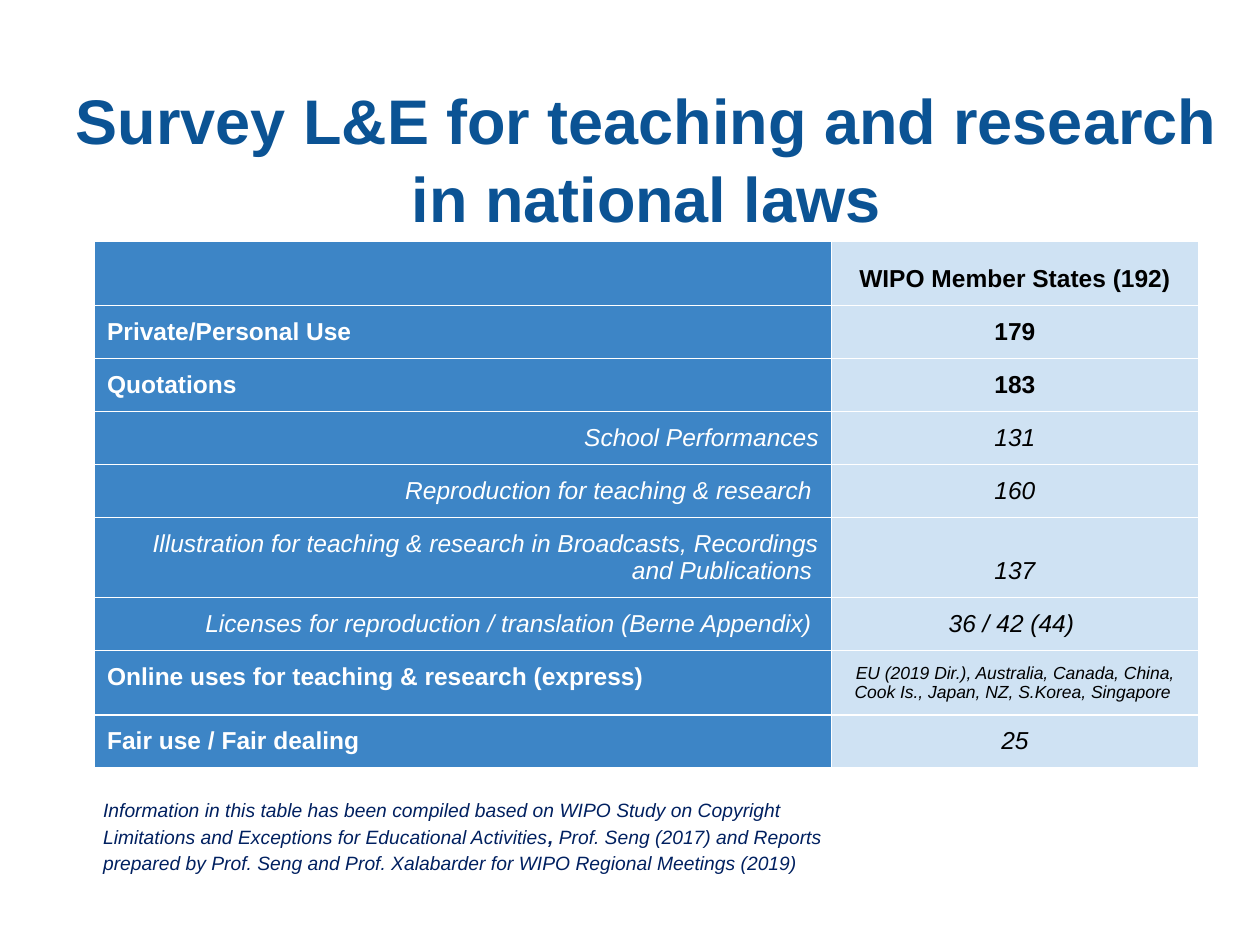
from lxml.etree import SubElement
from pptx import Presentation
from pptx.dml.color import RGBColor
from pptx.enum.text import MSO_ANCHOR as Anchor, MSO_AUTO_SIZE as AutoSize, PP_ALIGN as Align
from pptx.oxml.ns import qn
from pptx.util import Inches, Pt

COLORS = {"title": "0B5394", "label": "3D85C6", "value": "CFE2F3",
          "white": "FFFFFF", "black": "000000", "note": "002060"}


def add_run(p, text, size, color, bold=False, italic=False):
    r = p.add_run()
    r.text = text
    font = {"name": "Arial", "size": Pt(size), "bold": bold, "italic": italic}
    for name, value in font.items():
        setattr(r.font, name, value)
    r.font.color.rgb = RGBColor.from_string(COLORS[color])


def add_borders(cell):
    """Draw a thin white line on each side of the cell."""
    tcPr = cell._tc.get_or_add_tcPr()
    for i, side in enumerate(("lnL", "lnR", "lnT", "lnB")):
        ln = SubElement(tcPr, qn(f"a:{side}"), w=str(Pt(0.75)))
        fill = SubElement(ln, qn("a:solidFill"))
        SubElement(fill, qn("a:srgbClr"), val=COLORS["white"])
        tcPr.remove(ln)
        tcPr.insert(i, ln)  # lines come before the fill


prs = Presentation()
prs.slide_width, prs.slide_height = Inches(10), Inches(7.5)
s = prs.slides.add_slide(prs.slide_layouts[5])

# Title
title = s.shapes.title
title.left, title.top = Inches(0.47), Inches(0.52)
title.width, title.height = Inches(9.32), Inches(0.63)
tf = title.text_frame
tf.word_wrap = True
tf.auto_size = AutoSize.NONE
tf.vertical_anchor = Anchor.TOP
tf.margin_left = tf.margin_right = tf.margin_top = tf.margin_bottom = Inches(0.1)
p = tf.paragraphs[0]
p.alignment = Align.CENTER
p.line_spacing = 1.04
add_run(p, "Survey L&E for teaching and research in national laws", 36, "title", bold=True)

# Table: label, value, label is a sub-item, value is bold, value size, row height
rows = [
    ("", "WIPO Member States (192)", False, True, 14, 0.42),
    ("Private/Personal Use", "179", False, True, 14, 0.42),
    ("Quotations", "183", False, True, 14, 0.42),
    ("School Performances", "131", True, False, 14, 0.42),
    ("Reproduction for teaching & research ", "160", True, False, 14, 0.42),
    ("Illustration for teaching & research in Broadcasts, Recordings and Publications ",
     "137", True, False, 14, 0.64),
    ("Licenses for reproduction / translation (Berne Appendix) ",
     "36 / 42 (44) ", True, False, 14, 0.42),
    ("Online uses for teaching & research (express)",
     "EU (2019 Dir.), Australia, Canada, China, Cook Is., Japan, NZ, S.Korea, Singapore ",
     False, False, 10, 0.51),
    ("Fair use / Fair dealing", "25", False, False, 14, 0.42),
]
height = sum(row[-1] for row in rows)
table = s.shapes.add_table(len(rows), 2, Inches(0.75), Inches(1.92),
                           Inches(8.76), Inches(height)).table
table.first_row = table.horz_banding = False
for column, width in zip(table.columns, (5.85, 2.91)):
    column.width = Inches(width)

for i, (label, value, is_sub, bold, size, row_height) in enumerate(rows):
    table.rows[i].height = Inches(row_height)
    cells = [
        (label, "label", "white", Align.RIGHT if is_sub else Align.LEFT, not is_sub, 14, Anchor.TOP),
        (value, "value", "black", Align.CENTER, bold, size, Anchor.BOTTOM),
    ]
    for j, (text, fill, color, align, is_bold, font_size, anchor) in enumerate(cells):
        cell = table.cell(i, j)
        cell.fill.solid()
        cell.fill.fore_color.rgb = RGBColor.from_string(COLORS[fill])
        cell.vertical_anchor = anchor
        for side in ("left", "right", "top", "bottom"):
            setattr(cell, f"margin_{side}", Inches(0.1))
        add_borders(cell)
        p = cell.text_frame.paragraphs[0]
        p.alignment = align
        if text:
            add_run(p, text, font_size, color, bold=is_bold, italic=not is_bold)

# Source note
note = s.shapes.add_textbox(Inches(0.22), Inches(6.26), Inches(6.77), Inches(0.72))
tf = note.text_frame
tf.word_wrap = True
tf.auto_size = AutoSize.SHAPE_TO_FIT_TEXT
p = tf.paragraphs[0]
p.level = 1
p.line_spacing = 1.15
p._p.get_or_add_pPr().set("marL", str(Inches(0.5)))
for text, bold in [
    ("Information in this table has been compiled based on WIPO Study on Copyright "
     "Limitations and Exceptions for Educational Activities", False),
    (", ", True),
    ("Prof. Seng (2017) and Reports prepared by Prof. Seng and Prof. Xalabarder "
     "for WIPO Regional Meetings (2019)", False),
]:
    add_run(p, text, 11, "note", bold=bold, italic=True)

prs.save("out.pptx")
